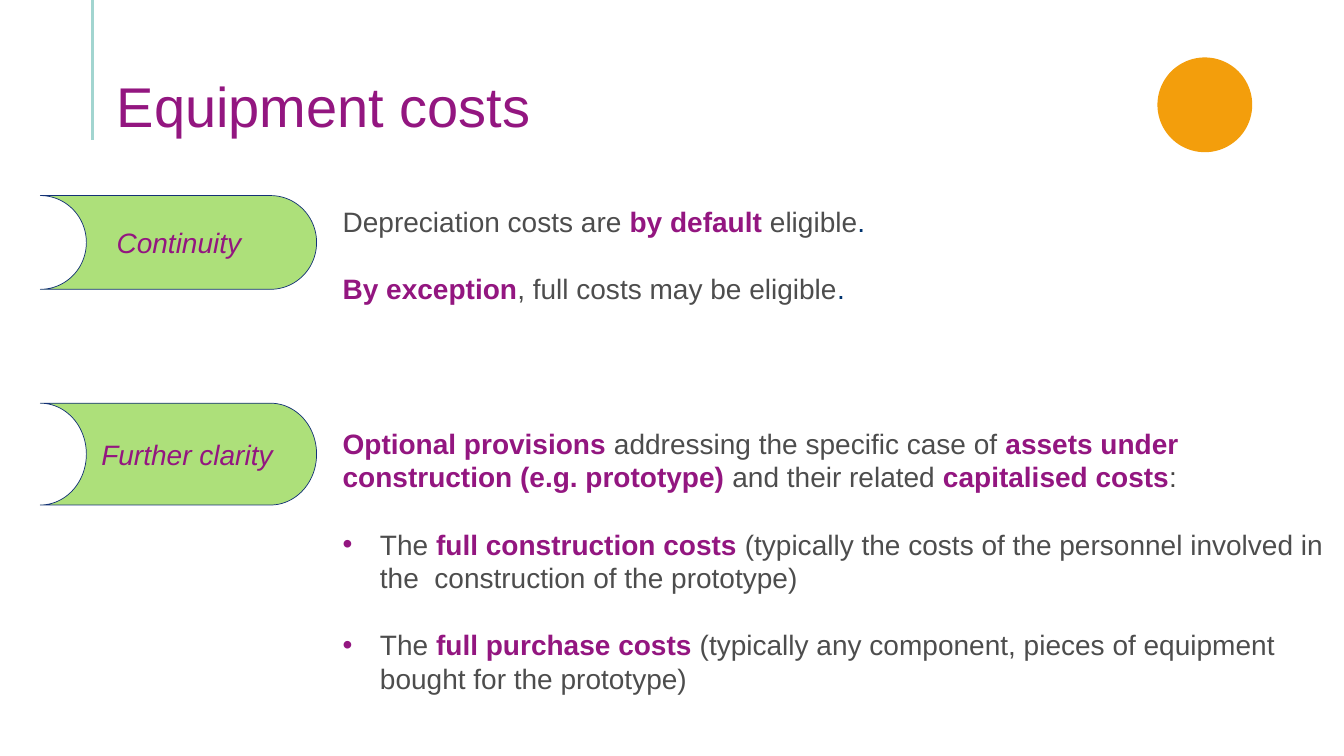
from lxml import etree
from pptx import Presentation
from pptx.dml.color import RGBColor
from pptx.enum.shapes import MSO_CONNECTOR, MSO_SHAPE
from pptx.enum.text import MSO_ANCHOR, PP_ALIGN
from pptx.oxml.ns import qn
from pptx.util import Inches, Pt

LINE = MSO_CONNECTOR.STRAIGHT
BANNER, CIRCLE = MSO_SHAPE.FLOWCHART_STORED_DATA, MSO_SHAPE.OVAL
TOP, MIDDLE, BOTTOM = MSO_ANCHOR.TOP, MSO_ANCHOR.MIDDLE, MSO_ANCHOR.BOTTOM
LEFT, CENTER = PP_ALIGN.LEFT, PP_ALIGN.CENTER

WIDTH, HEIGHT = 13.33, 7.5
PURPLE, GREY, DARK_GREY, NAVY = "931680", "4D4D4D", "444342", "00336F"
GREEN, BLUE, ORANGE, TEAL = "ADE07A", "133176", "F39E0C", "A2D5D0"
BANNER_LEFT, BANNER_WIDTH = 0.4, 2.74
LABEL_WIDTH, LABEL_HEIGHT = 2.39, 0.44
BODY_LEFT, BODY_WIDTH = 3.3, 9.93
BODY_SIZE, BODY_LEADING = 20, 24

SECTIONS = [
    dict(label="Continuity", label_left=0.58, top=1.94, height=0.93,
         body_top=1.98, body_height=1.1, paragraphs=[
             (False, [("Depreciation costs are ", GREY), ("by default ", PURPLE),
                      ("eligible", GREY), (".", NAVY)]),
             (False, [("By exception", PURPLE), (", full costs may be eligible", GREY),
                      (".", NAVY)]),
         ]),
    dict(label="Further clarity", label_left=0.66, top=4, height=1.01,
         body_top=4.18, body_height=2.8, paragraphs=[
             (False, [("Optional provisions ", PURPLE),
                      ("addressing the specific case of ", GREY),
                      ("assets under construction (e.g. prototype) ", PURPLE),
                      ("and their related ", GREY), ("capitalised costs", PURPLE),
                      (":", DARK_GREY)]),
             (True, [("The ", GREY), ("full construction costs ", PURPLE),
                     ("(typically the costs of the personnel involved in the"
                      "  construction of the prototype)", GREY)]),
             (True, [("The ", GREY), ("full purchase costs ", PURPLE),
                     ("(typically any component, pieces of equipment bought"
                      " for the prototype)", GREY)]),
         ]),
]


def color(hex_text):
    """Turn a hex string into a colour."""
    return RGBColor.from_string(hex_text)


def add_run(paragraph, text, size=BODY_SIZE, fill=PURPLE, bold=False, italic=False):
    """Append formatted text to a paragraph."""
    run = paragraph.add_run()
    run.text = text
    run.font.name = "Arial"
    run.font.size = Pt(size)
    run.font.color.rgb = color(fill)
    run.font.bold = bold
    run.font.italic = italic


def add_frame(slide, box, anchor=TOP):
    """Add a wrapping text box and return its text frame."""
    frame = slide.shapes.add_textbox(*map(Inches, box)).text_frame
    frame.word_wrap = True
    frame.vertical_anchor = anchor
    return frame


def add_text(slide, box, text, anchor=MIDDLE, align=LEFT, **style):
    """Add a text box with one paragraph and return its frame."""
    frame = add_frame(slide, box, anchor)
    frame.paragraphs[0].alignment = align
    add_run(frame.paragraphs[0], text, **style)
    return frame


def add_figure(slide, kind, box, fill, outline=None):
    """Add a filled preset shape with an optional thin outline."""
    shape = slide.shapes.add_shape(kind, *map(Inches, box))
    shape.shadow.inherit = False
    shape.fill.solid()
    shape.fill.fore_color.rgb = color(fill)
    if outline:
        shape.line.color.rgb = color(outline)
        shape.line.width = Pt(0.5)
    else:
        shape.line.fill.background()
    return shape


def set_bullet(paragraph):
    """Give a paragraph a purple bullet and a hanging indent."""
    properties = paragraph._p.get_or_add_pPr()
    properties.set("marL", str(Inches(0.37)))
    properties.set("indent", str(-Inches(0.37)))
    bullet_color = etree.SubElement(properties, qn("a:buClr"))
    etree.SubElement(bullet_color, qn("a:srgbClr"), val=PURPLE)
    etree.SubElement(properties, qn("a:buFont"), typeface="Arial")
    etree.SubElement(properties, qn("a:buChar"), char="•")


def add_header(slide, left, top, width, height):
    """Place the title, the rule to its left and the circle to its right."""
    rule_left = Inches(left - 0.14)
    rule = slide.shapes.add_connector(LINE, rule_left, 0, rule_left, Inches(top + height))
    rule.line.color.rgb = color(TEAL)
    rule.line.width = Pt(2.25)
    etree.SubElement(rule._element.spPr, qn("a:effectLst"))
    frame = add_text(slide, (left, top, width, height), "Equipment costs",
                     anchor=BOTTOM, size=40)
    frame.margin_bottom = 0
    frame.paragraphs[0].line_spacing = 0.9
    add_figure(slide, CIRCLE, (left + 10.42, top + 0.04, 0.94, 0.94), ORANGE)


def add_body(slide, box, paragraphs):
    """Write the paragraphs of a section with one line of space between them."""
    frame = add_frame(slide, box)
    for index, (bulleted, runs) in enumerate(paragraphs):
        paragraph = frame.add_paragraph() if index else frame.paragraphs[0]
        paragraph.line_spacing = Pt(BODY_LEADING)
        paragraph.space_before = Pt(BODY_LEADING if index else 0)
        if bulleted:
            set_bullet(paragraph)
        for text, fill in runs:
            add_run(paragraph, text, fill=fill, bold=fill == PURPLE)


def add_section(slide, label, label_left, top, height, body_top, body_height, paragraphs):
    """Place a labelled banner and the text beside it."""
    banner = add_figure(slide, BANNER, (BANNER_LEFT, top, BANNER_WIDTH, height), GREEN, BLUE)
    banner.rotation = 180
    label_top = top + (height - LABEL_HEIGHT) / 2
    add_text(slide, (label_left, label_top, LABEL_WIDTH, LABEL_HEIGHT), label,
             align=CENTER, italic=True)
    add_body(slide, (BODY_LEFT, body_top, BODY_WIDTH, body_height), paragraphs)


def main():
    """Build the slide and save it."""
    presentation = Presentation()
    presentation.slide_width = Inches(WIDTH)
    presentation.slide_height = Inches(HEIGHT)
    slide = presentation.slides.add_slide(presentation.slide_layouts[6])
    add_header(slide, 1.06, 0.53, 11.5, 0.86)
    for section in SECTIONS:
        add_section(slide, **section)
    presentation.save("out.pptx")


if __name__ == "__main__":
    main()
